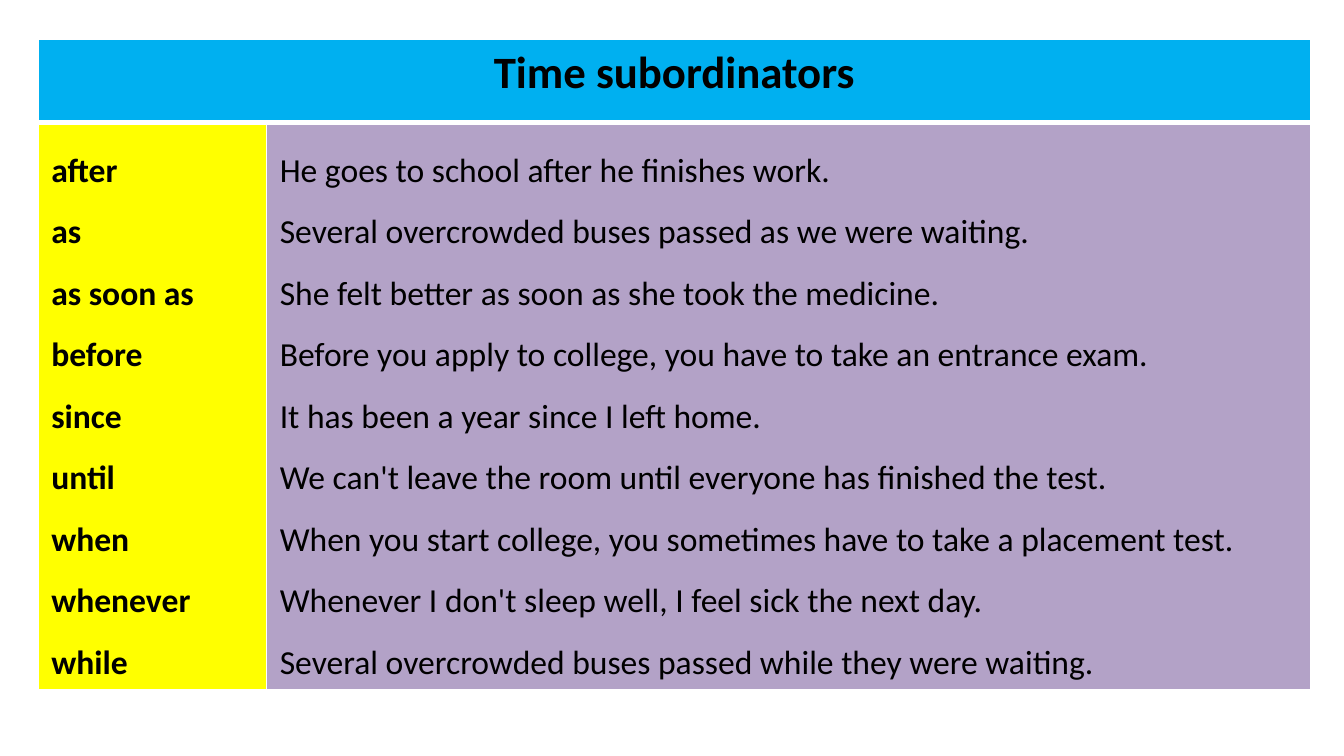
from lxml.etree import SubElement
from pptx import Presentation
from pptx.dml.color import RGBColor as Rgb
from pptx.enum.text import PP_ALIGN as Align
from pptx.oxml.ns import qn
from pptx.util import Pt

COLORS = {
    "text": "000000",
    "border": "FFFFFF",
    "header": "00B0F0",
    "words": "FFFF00",
    "examples": "B3A2C7",
}

SUBORDINATORS = [
    ("after", "He goes to school after he finishes work."),
    ("as", "Several overcrowded buses passed as we were waiting."),
    ("as soon as", "She felt better as soon as she took the medicine."),
    ("before", "Before you apply to college, you have to take an entrance exam."),
    ("since", "It has been a year since I left home."),
    ("until", "We can't leave the room until everyone has finished the test."),
    ("when", "When you start college, you sometimes have to take a placement test."),
    ("whenever", "Whenever I don't sleep well, I feel sick the next day."),
    ("while", "Several overcrowded buses passed while they were waiting."),
]


class TableSlide:
    font_name = "Calibri"

    def __init__(self, deck):
        self.page = deck.slides.add_slide(deck.slide_layouts[6])

    def table(self, left, top, widths, heights):
        frame = self.page.shapes.add_table(
            len(heights), len(widths), Pt(left), Pt(top), Pt(sum(widths)), Pt(sum(heights)))
        for column, width in zip(frame.table.columns, widths):
            column.width = Pt(width)
        for row, height in zip(frame.table.rows, heights):
            row.height = Pt(height)
        return frame.table

    def borders(self, cell, **widths):
        properties = cell._tc.get_or_add_tcPr()
        for side in "LRTB":
            line = SubElement(properties, qn(f"a:ln{side}"), w=str(Pt(widths.get(side, 1))))
            fill = SubElement(line, qn("a:solidFill"))
            SubElement(fill, qn("a:srgbClr"), val=COLORS["border"])

    def fill(self, cell, color):
        cell.fill.solid()
        cell.fill.fore_color.rgb = Rgb.from_string(COLORS[color])

    def text(self, cell, lines, font, layout):
        box = cell.text_frame
        box.text = "\n".join(lines)
        for para in box.paragraphs:
            for name, value in layout.items():
                setattr(para, name, value)
            for span in para.runs:
                for name, value in {"name": self.font_name, **font}.items():
                    setattr(span.font, name, value)
                span.font.color.rgb = Rgb.from_string(COLORS["text"])


def main():
    deck = Presentation()
    deck.slide_width, deck.slide_height = Pt(720), Pt(405)
    slide = TableSlide(deck)
    table = slide.table(20.3, 20.9, widths=[122.4, 559.4], heights=[45, 295])

    # Header across both columns, with a thick rule below
    header = table.cell(0, 0)
    header.merge(table.cell(0, 1))
    for cell in table.rows[0].cells:
        slide.borders(cell, B=3)
        slide.fill(cell, "header")
    slide.text(header, ["Time subordinators"],
               {"size": Pt(24), "bold": True}, {"alignment": Align.CENTER})

    # Subordinators on the left, example sentences on the right
    words, examples = zip(*SUBORDINATORS)
    columns = [("words", words, True), ("examples", examples, False)]
    for cell, (color, lines, bold) in zip(table.rows[1].cells, columns):
        slide.borders(cell, T=3)
        slide.fill(cell, color)
        slide.text(cell, lines, {"size": Pt(18), "bold": bold}, {"line_spacing": 1.5})

    deck.save("out.pptx")


if __name__ == "__main__":
    main()
